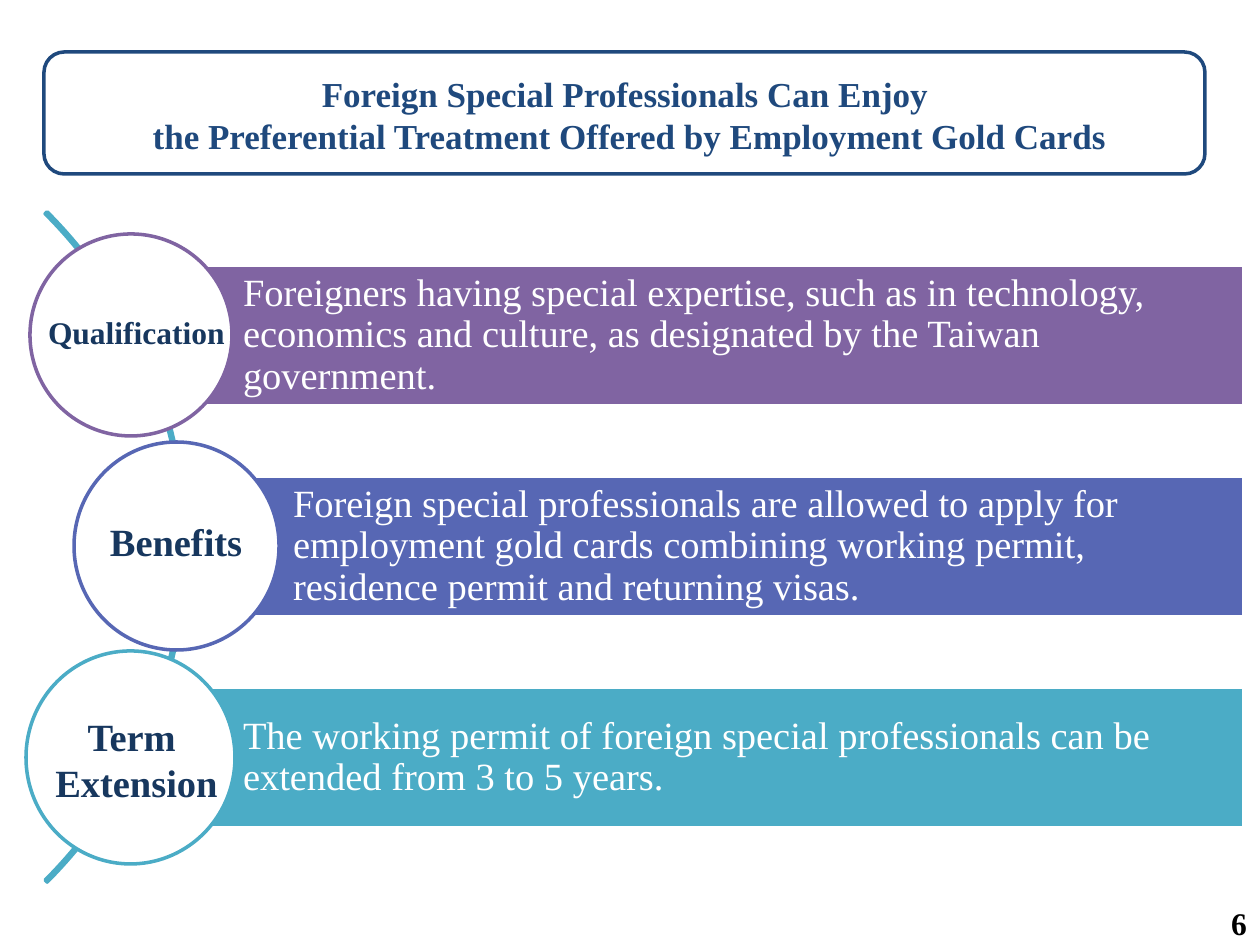
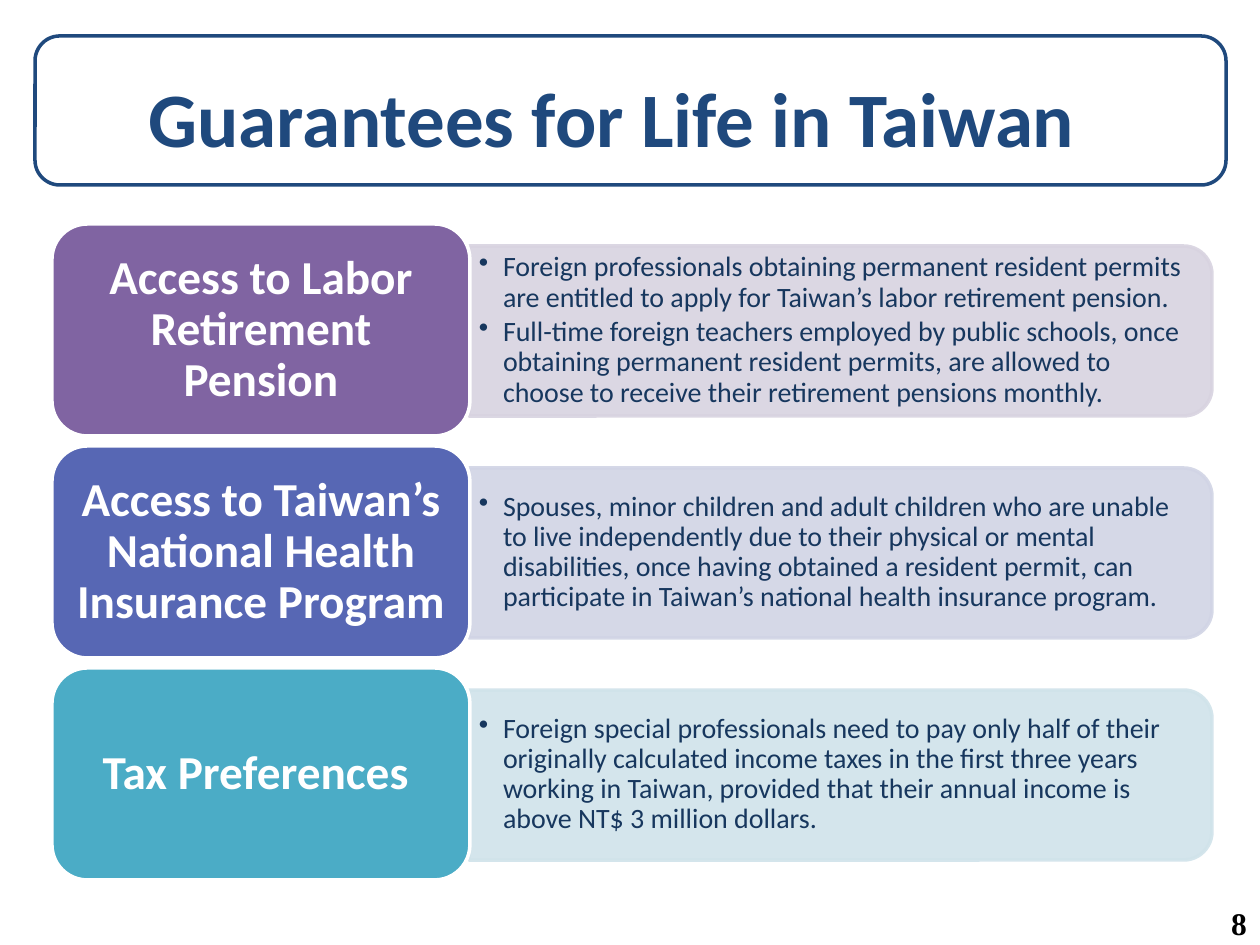
import copy
import pptx
import pptx.util
import pptx.dml.color
import pptx.enum.shapes
import pptx.enum.text
import pptx.oxml.ns
from lxml import etree

# Shared look
KIND = pptx.enum.shapes.MSO_SHAPE
ALIGN = pptx.enum.text.PP_ALIGN
ANCHOR = pptx.enum.text.MSO_ANCHOR
NAVY, INK, WHITE, BLACK = "1F497D", "17375E", "FFFFFF", "000000"
PURPLE, BLUE, TEAL = "8064A2", "5767B4", "4BACC6"
SERIF, SANS = "Times New Roman", "Calibri"
SCALE = 914400 / 126  # EMU in one px
PAGE_BOX = (1166, 898, 94, 30)

# Slide 1: gold cards
GOLD = dict(
    title="Foreign Special Professionals Can Enjoy \vthe Preferential Treatment Offered by Employment Gold Cards",
    size=20, font=SERIF, page="6",
    frame=(44, 52, 1161, 122), box=(44, 35, 1171, 158))
ARC = (-762, 73, 948, 948)
BAR_TOP, BAR_STEP, BAR_HIGH, BAR_END = 265, 211, 141, 1244
# colour, bar left, circle box, label, label box, label format, text
STEPS = [
    (PURPLE, 131, (30, 234, 202, 202), "Qualification", (35, 307, 208, 50), dict(size=18),
     "Foreigners having special expertise, such as in technology, economics and culture, "
     "as designated by the Taiwan government."),
    (BLUE, 181, (74, 442, 205, 208), "Benefits", (97, 512, 166, 59), dict(size=22),
     "Foreign special professionals are allowed to apply for employment gold cards "
     "combining working permit, residence permit and returning visas."),
    (TEAL, 131, (26, 651, 209, 213), "Term \vExtension", (42, 707, 189, 106),
     dict(size=22, align=ALIGN.CENTER, wrap=False),
     "The working permit of foreign special professionals can be extended from 3 to 5 years."),
]

# Slide 2: life in Taiwan
LIFE = dict(
    title="Guarantees for Life in Taiwan", size=44, font=SANS, page="8",
    frame=(35, 36, 1191, 149), box=(22, 38, 1180, 158))
CARD = (52, 224, 418, 212)
PANEL = (469, 246, 743, 170)
LIST = (470, 254, 734, 153)
ROW_STEP = 222
INDENT = 24
# card colour, panel colour, heading, points
RIGHTS = [
    (PURPLE, "D8D3E0", "Access to Labor Retirement Pension", [
        "Foreign professionals obtaining permanent resident permits are entitled to apply "
        "for Taiwan’s labor retirement pension.",
        "Full-time foreign teachers employed by public schools, once obtaining permanent "
        "resident permits, are allowed to choose to receive their retirement pensions monthly."]),
    (BLUE, "D1D4E5", "Access to Taiwan’s National Health Insurance Program", [
        "Spouses, minor children and adult children who are unable to live independently "
        "due to their physical or mental disabilities, once having obtained a resident "
        "permit, can participate in Taiwan’s national health insurance program."]),
    (TEAL, "D0E3EA", "Tax Preferences ", [
        "Foreign special professionals need to pay only half of their originally calculated "
        "income taxes in the first three years working in Taiwan, provided that their "
        "annual income is above NT$ 3 million dollars."]),
]


def px(num):
    return pptx.util.Emu(round(num * SCALE))


def rgb(code):
    return pptx.dml.color.RGBColor.from_string(code)


def place(box):
    return [px(num) for num in box]


def shift(box, down):
    left, top, wide, high = box
    return left, top + down, wide, high


def sub(parent, tag, **attrs):
    return etree.SubElement(parent, pptx.oxml.ns.qn(tag), **attrs)


def write(shape, text, size=18, font=SERIF, color=INK, bold=True, align=ALIGN.LEFT,
          anchor=ANCHOR.TOP, pad=(13, 6, 13, 6), space=1.0, wrap=True, bullet=False):
    """Fill a shape with one paragraph, or with a list of them."""
    frame = shape.text_frame
    frame.auto_size = pptx.enum.text.MSO_AUTO_SIZE.NONE
    frame.word_wrap = wrap
    frame.vertical_anchor = anchor
    (frame.margin_left, frame.margin_top,
     frame.margin_right, frame.margin_bottom) = place(pad)
    for num, line in enumerate([text] if isinstance(text, str) else text):
        para = frame.add_paragraph() if num else frame.paragraphs[0]
        para.text = line
        para.alignment = align
        para.line_spacing = space
        if num:
            para.space_before = pptx.util.Pt(2.4)
        if bullet:
            props = para._p.get_or_add_pPr()
            props.set("marL", str(px(INDENT)))
            props.set("indent", str(-px(INDENT)))
            sub(props, "a:buChar", char="•")
        for run in para.runs:
            run.font.size = pptx.util.Pt(size)
            run.font.name = font
            run.font.bold = bold
            run.font.color.rgb = rgb(color)
        for brk in para._p.findall(pptx.oxml.ns.qn("a:br")):
            brk.insert(0, copy.deepcopy(para.runs[0]._r.rPr))


def draw(slide, kind, box, fill=None, line=WHITE, alpha=None):
    shape = slide.shapes.add_shape(kind, *place(box))
    shape.shadow.inherit = False
    if fill:
        shape.fill.solid()
        shape.fill.fore_color.rgb = rgb(fill)
    else:
        shape.fill.background()
    shape.line.color.rgb = rgb(line)
    shape.line.width = pptx.util.Pt(2)
    if alpha:
        for node in shape._element.spPr.iter(pptx.oxml.ns.qn("a:srgbClr")):
            sub(node, "a:alpha", val=str(alpha * 1000))
    return shape


def label(slide, box, text, **form):
    write(slide.shapes.add_textbox(*place(box)), text, **form)


def start(deck, head):
    """Add a slide with its framed title and page number."""
    slide = deck.slides.add_slide(deck.slide_layouts[5])
    draw(slide, KIND.ROUNDED_RECTANGLE, head["frame"], WHITE, NAVY)
    title = slide.shapes.title
    title.left, title.top, title.width, title.height = place(head["box"])
    write(title, head["title"], size=head["size"], font=head["font"], color=NAVY,
          align=ALIGN.CENTER, anchor=ANCHOR.MIDDLE)
    slide.shapes._spTree.append(title._element)  # above the frame
    label(slide, PAGE_BOX, head["page"], color=BLACK, align=ALIGN.RIGHT)
    return slide


def gold_slide(deck):
    slide = start(deck, GOLD)
    arc = draw(slide, KIND.BLOCK_ARC, ARC, line=TEAL)
    for num, value in enumerate((189, 27, 0.003)):
        arc.adjustments[num] = value
    for num, (color, left, ring, name, spot, form, text) in enumerate(STEPS):
        box = (left, BAR_TOP + num * BAR_STEP, BAR_END - left, BAR_HIGH)
        bar = draw(slide, KIND.RECTANGLE, box, color)
        write(bar, text, size=22, color=WHITE, bold=False, anchor=ANCHOR.MIDDLE,
              pad=(112, 8, 8, 8), space=0.9)
        draw(slide, KIND.OVAL, ring, WHITE, color)
        label(slide, spot, name, **form)


def life_slide(deck):
    slide = start(deck, LIFE)
    for num, (color, tint, name, points) in enumerate(RIGHTS):
        down = num * ROW_STEP
        # The panel is a tall shape turned on its side about its centre
        left, top, wide, high = shift(PANEL, down)
        tall = (left + (wide - high) / 2, top + (high - wide) / 2, high, wide)
        panel = draw(slide, KIND.ROUND_2_SAME_RECTANGLE, tall, tint, tint, alpha=90)
        panel.rotation = 90
        label(slide, shift(LIST, down), points, size=16, font=SANS, bold=False,
              anchor=ANCHOR.MIDDLE, pad=(9, 4, 9, 4), space=0.9, bullet=True)
        card = draw(slide, KIND.ROUNDED_RECTANGLE, shift(CARD, down), color)
        write(card, name, size=27, font=SANS, color=WHITE, align=ALIGN.CENTER,
              anchor=ANCHOR.MIDDLE, pad=(14, 8, 14, 8), space=0.9)


def main():
    deck = pptx.Presentation()
    deck.slide_width, deck.slide_height = px(1260), px(945)
    gold_slide(deck)
    life_slide(deck)
    deck.save("out.pptx")


if __name__ == "__main__":
    main()
